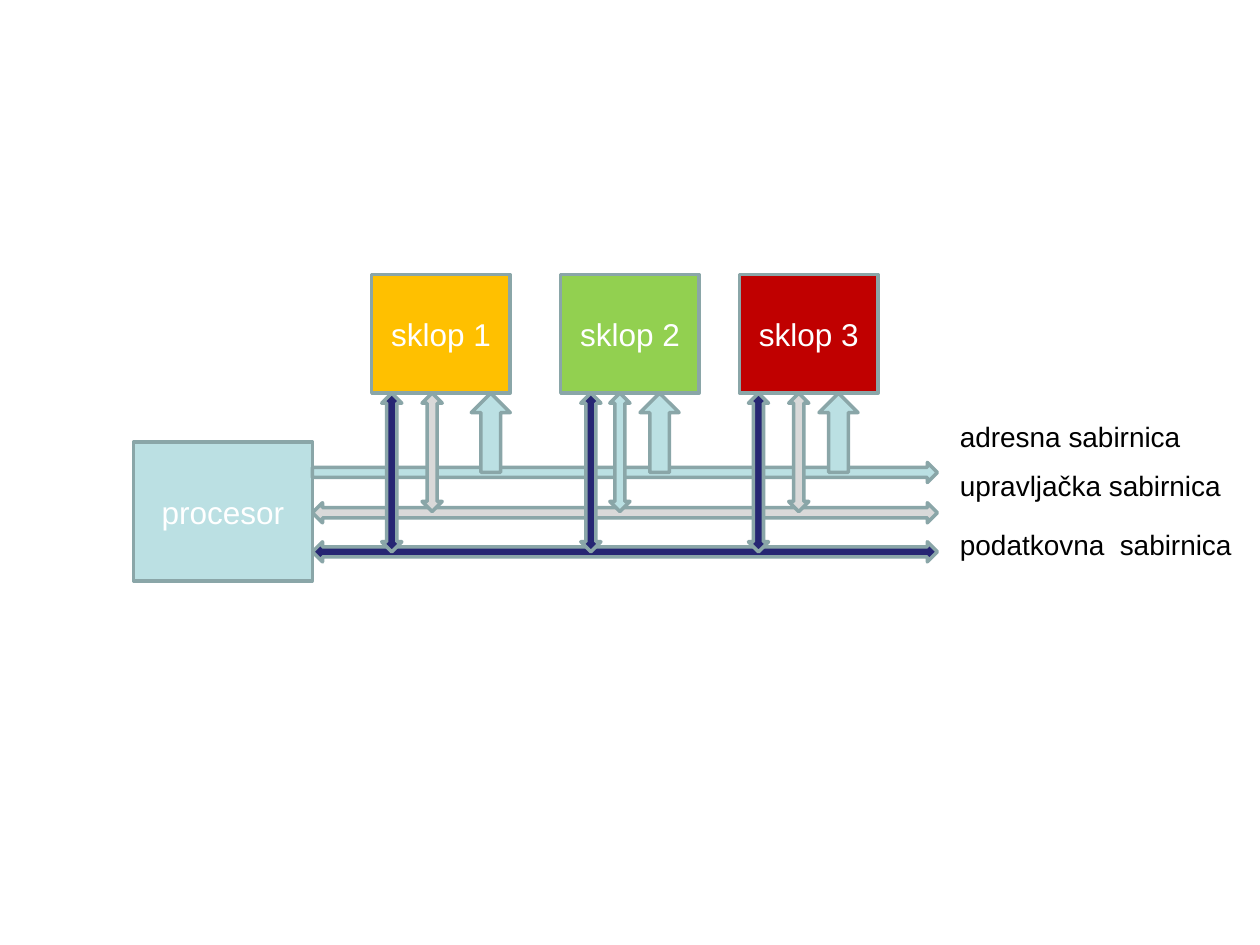
"""Build a slide showing a processor linked to three units by three buses."""
from pptx import Presentation
from pptx.dml.color import RGBColor
from pptx.enum.shapes import MSO_SHAPE
from pptx.enum.text import MSO_ANCHOR, MSO_AUTO_SIZE, PP_ALIGN
from pptx.util import Inches, Pt

RECTANGLE = MSO_SHAPE.RECTANGLE
RIGHT_ARROW = MSO_SHAPE.RIGHT_ARROW
LEFT_RIGHT_ARROW = MSO_SHAPE.LEFT_RIGHT_ARROW
UP_ARROW = MSO_SHAPE.UP_ARROW
UP_DOWN_ARROW = MSO_SHAPE.UP_DOWN_ARROW
MIDDLE = MSO_ANCHOR.MIDDLE
GROW = MSO_AUTO_SIZE.SHAPE_TO_FIT_TEXT
CENTER = PP_ALIGN.CENTER

PALE_BLUE = RGBColor(0xBB, 0xE0, 0xE3)
GREY = RGBColor(0xD9, 0xD9, 0xD9)
NAVY = RGBColor(0x26, 0x26, 0x73)
AMBER = RGBColor(0xFF, 0xC0, 0x00)
GREEN = RGBColor(0x92, 0xD0, 0x50)
RED = RGBColor(0xC0, 0x00, 0x00)
OUTLINE = RGBColor(0x8A, 0xA6, 0xA8)
WHITE = RGBColor(0xFF, 0xFF, 0xFF)
BLACK = RGBColor(0x00, 0x00, 0x00)

UNIT_TOP, UNIT_WIDTH, UNIT_HEIGHT = 2.18, 1.1, 0.94
UNIT_BOTTOM = UNIT_TOP + UNIT_HEIGHT
BUS_LEFT, BUS_LENGTH, BUS_WIDTH = 2.48, 4.96, 0.16

presentation = Presentation()
presentation.slide_width = Inches(10)
presentation.slide_height = Inches(7.5)
slide = presentation.slides.add_slide(presentation.slide_layouts[6])


def write(holder, text, size, color):
    holder.text_frame.text = text
    paragraph = holder.text_frame.paragraphs[0]
    paragraph.font.name = "Arial"
    paragraph.font.size = Pt(size)
    paragraph.font.color.rgb = color
    return paragraph


def add_block(preset, left, top, width, height, fill, text=""):
    block = slide.shapes.add_shape(
        preset, Inches(left), Inches(top), Inches(width), Inches(height))
    block.shadow.inherit = False
    block.fill.solid()
    block.fill.fore_color.rgb = fill
    block.line.color.rgb = OUTLINE
    block.line.width = Pt(2)
    if text:
        block.text_frame.vertical_anchor = MIDDLE
        write(block, text, 18, WHITE).alignment = CENTER


add_block(RECTANGLE, 1.06, 3.51, 1.42, 1.1, PALE_BLUE, "procesor")
add_block(RIGHT_ARROW, BUS_LEFT, 3.67, BUS_LENGTH, BUS_WIDTH, PALE_BLUE)

units = [("sklop 1", 2.95, AMBER), ("sklop 2", 4.45, GREEN), ("sklop 3", 5.87, RED)]
for unit_name, left, color in units:
    add_block(RECTANGLE, left, UNIT_TOP, UNIT_WIDTH, UNIT_HEIGHT, color, unit_name)

for left in (3.74, 5.08, 6.5):
    add_block(UP_ARROW, left, UNIT_BOTTOM, 0.31, 0.63, PALE_BLUE)

for top, color in ((3.99, GREY), (4.3, NAVY)):
    add_block(LEFT_RIGHT_ARROW, BUS_LEFT, top, BUS_LENGTH, BUS_WIDTH, color)

for left in (3.03, 4.61, 5.94):
    add_block(UP_DOWN_ARROW, left, UNIT_BOTTOM, BUS_WIDTH, 1.26, NAVY)

for left, color in ((3.35, GREY), (4.84, PALE_BLUE), (6.26, GREY)):
    add_block(UP_DOWN_ARROW, left, UNIT_BOTTOM, BUS_WIDTH, 0.94, color)

bus_labels = [
    ("adresna sabirnica", 3.28, 2.13),
    ("upravljačka sabirnica", 3.67, 2.48),
    ("podatkovna  sabirnica", 4.14, 2.48),
]
for bus_name, top, width in bus_labels:
    label = slide.shapes.add_textbox(Inches(7.52), Inches(top), Inches(width), Inches(0.37))
    label.text_frame.word_wrap = True
    label.text_frame.auto_size = GROW
    write(label, bus_name, 16, BLACK)

presentation.save("out.pptx")
